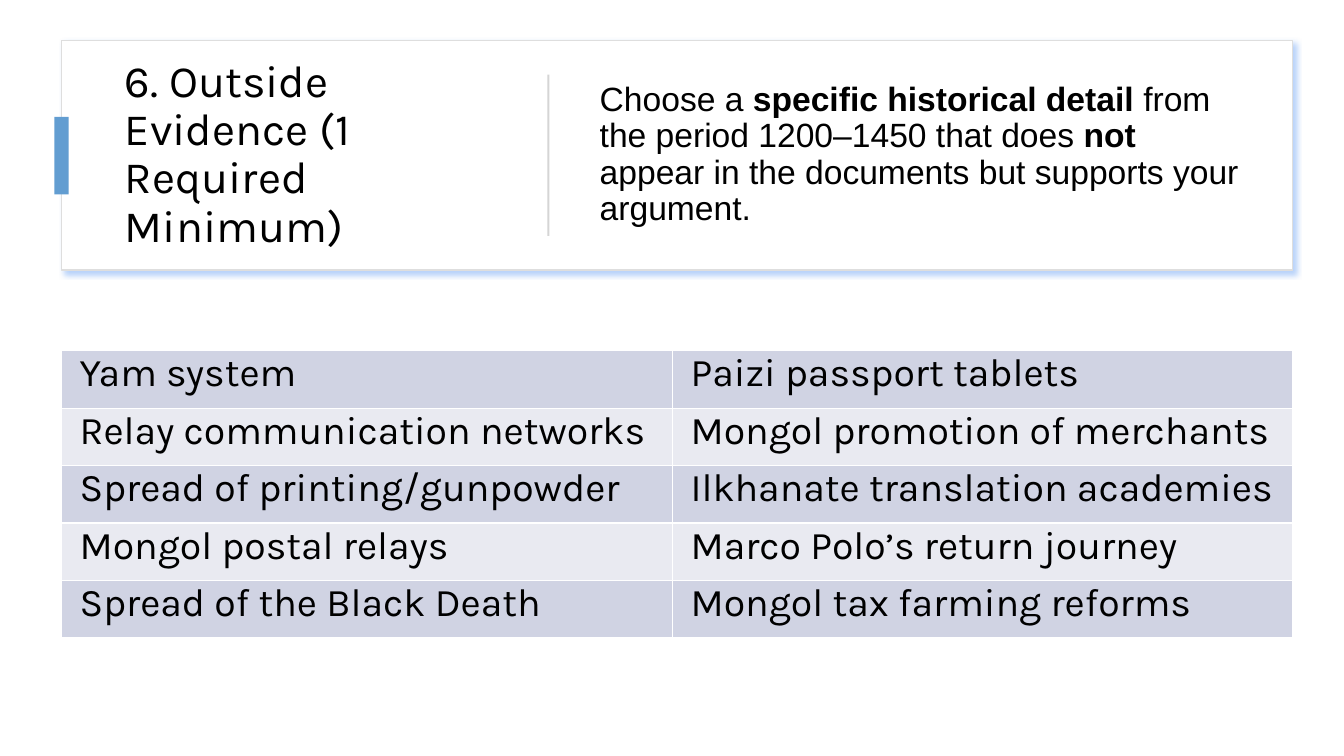
from pptx import Presentation
from pptx.dml.color import RGBColor
from pptx.enum.shapes import MSO_SHAPE
from pptx.enum.text import MSO_ANCHOR
from pptx.oxml import parse_xml
from pptx.oxml.ns import nsdecls
from pptx.util import Inches, Pt

COLORS = {
    "card": "FFFFFF", "border": "DEDEDE", "shadow": "71A6F5",
    "accent": "629DD1", "divider": "D5D5D5", "text": "000000",
    "band_dark": "D0D3E3", "band_light": "E9EAF1", "grid": "FFFFFF",
}
SLIDE_W, SLIDE_H = 13.33, 7.5
LEFT, WIDTH = 0.61, 12.21
CARD_TOP, CARD_H = 0.4, 2.28
CARD_MID = CARD_TOP + CARD_H / 2
TEXT_H = 1.8
TABLE_TOP, ROW_H = 3.48, 0.57
COL_WIDTHS = (6.06, 6.15)

TITLE = [("6. Outside Evidence (1 Required Minimum)", False)]
TASK = [
    ("Choose a ", False),
    ("specific historical detail", True),
    (" from the period 1200–1450 that does ", False),
    ("not", True),
    (" appear in the documents but supports your argument.", False),
]
EVIDENCE = [
    ("Yam system", "Paizi passport tablets"),
    ("Relay communication networks", "Mongol promotion of merchants"),
    ("Spread of printing/gunpowder", "Ilkhanate translation academies"),
    ("Mongol postal relays", "Marco Polo’s return journey"),
    ("Spread of the Black Death", "Mongol tax farming reforms"),
]


def rgb(name):
    return RGBColor.from_string(COLORS[name])


def add_box(s, x, y, w, h, fill, line=None):
    sp = s.shapes.add_shape(MSO_SHAPE.RECTANGLE, *map(Inches, (x, y, w, h)))
    sp.shadow.inherit = False
    sp.fill.solid()
    sp.fill.fore_color.rgb = rgb(fill)
    if line:
        sp.line.color.rgb = rgb(line)
        sp.line.width = Pt(1)
    else:
        sp.line.fill.background()
    return sp


def add_shadow(sp):
    """Give the shape a soft shadow to the lower right."""
    effects = sp._element.spPr.find("{*}effectLst")
    effects.append(parse_xml(
        f'<a:outerShdw {nsdecls("a")} blurRad="{Pt(4)}" dist="{Pt(3)}" '
        f'dir="2700000" algn="tl" rotWithShape="0">'
        f'<a:srgbClr val="{COLORS["shadow"]}"><a:alpha val="50000"/></a:srgbClr>'
        f'</a:outerShdw>'))


def add_runs(p, runs, font, size):
    for text, bold in runs:
        r = p.add_run()
        r.text = text
        r.font.name, r.font.size, r.font.bold = font, Pt(size), bold
        r.font.color.rgb = rgb("text")


def add_text(s, x, w, runs, font, size):
    """Add text centred vertically on the card."""
    box = (x, CARD_MID - TEXT_H / 2, w, TEXT_H)
    tf = s.shapes.add_textbox(*map(Inches, box)).text_frame
    tf.word_wrap = True
    tf.vertical_anchor = MSO_ANCHOR.MIDDLE
    p = tf.paragraphs[0]
    p.line_spacing = 0.9
    add_runs(p, runs, font, size)


def set_borders(cell):
    tcPr = cell._tc.get_or_add_tcPr()
    for i, side in enumerate(("lnL", "lnR", "lnT", "lnB")):
        tcPr.insert(i, parse_xml(
            f'<a:{side} {nsdecls("a")} w="{Pt(1)}"><a:solidFill>'
            f'<a:srgbClr val="{COLORS["grid"]}"/></a:solidFill></a:{side}>'))


def add_evidence_table(s):
    frame = s.shapes.add_table(
        len(EVIDENCE), len(COL_WIDTHS), Inches(LEFT), Inches(TABLE_TOP),
        Inches(WIDTH), Inches(ROW_H * len(EVIDENCE)))
    table = frame.table
    table.first_row = False
    for column, width in zip(table.columns, COL_WIDTHS):
        column.width = Inches(width)
    for i, row in enumerate(EVIDENCE):
        table.rows[i].height = Inches(ROW_H)
        for j, text in enumerate(row):
            cell = table.cell(i, j)
            cell.margin_left = cell.margin_right = Inches(0.18)
            cell.margin_top = cell.margin_bottom = 0
            cell.fill.solid()
            cell.fill.fore_color.rgb = rgb("band_light" if i % 2 else "band_dark")
            set_borders(cell)
            add_runs(cell.text_frame.paragraphs[0], [(text, False)], "Karla", 28)


def main():
    prs = Presentation()
    prs.slide_width, prs.slide_height = Inches(SLIDE_W), Inches(SLIDE_H)
    s = prs.slides.add_slide(prs.slide_layouts[6])
    add_shadow(add_box(s, LEFT, CARD_TOP, WIDTH, CARD_H, "card", "border"))
    add_text(s, 1.14, 3.89, TITLE, "Karla", 32)
    add_box(s, 0.54, CARD_MID - 0.38, 0.14, 0.77, "accent")
    add_box(s, 5.43, CARD_MID - 0.8, 0.02, 1.6, "divider")
    add_text(s, 5.85, 6.56, TASK, "Arial", 24)
    add_evidence_table(s)
    prs.save("out.pptx")


if __name__ == "__main__":
    main()
